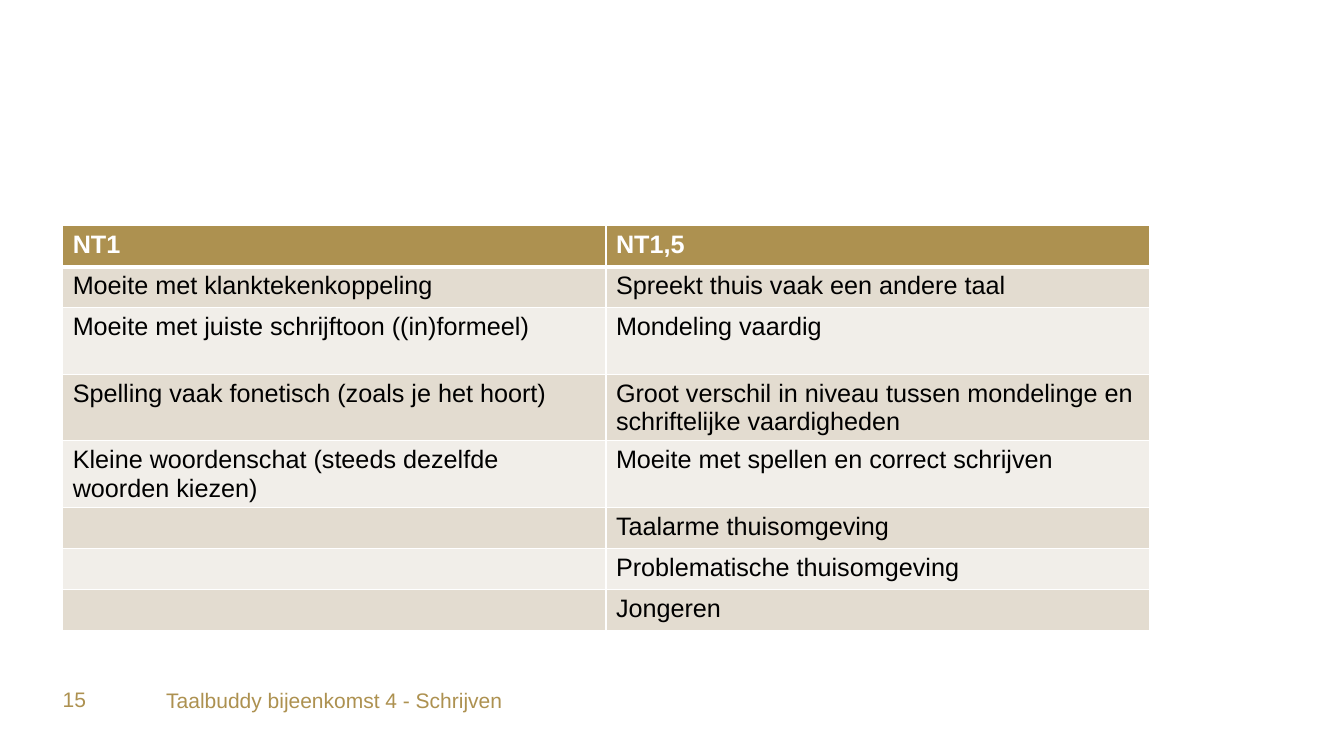
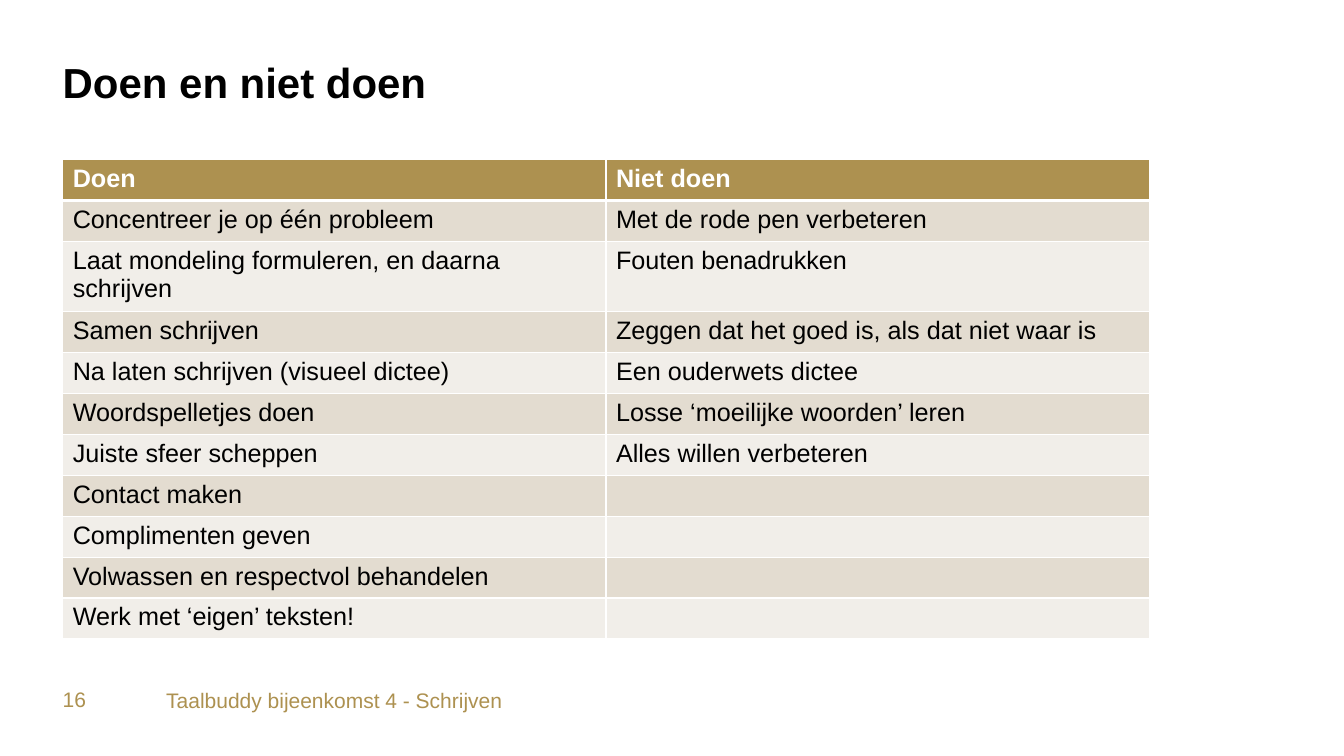
from lxml import etree
from pptx import Presentation
from pptx.dml.color import RGBColor
from pptx.oxml.ns import qn
from pptx.util import Cm, Pt

GOLD = RGBColor(0xAD, 0x91, 0x50)
SAND = RGBColor(0xE3, 0xDC, 0xD0)
CREAM = RGBColor(0xF1, 0xEE, 0xE9)
WHITE = RGBColor(0xFF, 0xFF, 0xFF)
BLACK = RGBColor(0x00, 0x00, 0x00)

FONT = "Arial"
FOOTER = "Taalbuddy bijeenkomst 4 - Schrijven"
LEFT = Cm(1.58)
TABLE_WIDTH = Cm(27.38)
ROW_HEIGHT = Cm(1.03)
TALL_ROW_HEIGHT = Cm(1.68)

SLIDES = [
    {
        "number": 15,
        "title": None,
        "top": Cm(5.69),
        "tall_rows": (2, 3, 4),
        "rows": [
            ("NT1", "NT1,5"),
            ("Moeite met klanktekenkoppeling", "Spreekt thuis vaak een andere taal"),
            ("Moeite met juiste schrijftoon ((in)formeel)", "Mondeling vaardig"),
            ("Spelling vaak fonetisch (zoals je het hoort)",
             "Groot verschil in niveau tussen mondelinge en schriftelijke vaardigheden"),
            ("Kleine woordenschat (steeds dezelfde woorden kiezen)",
             "Moeite met spellen en correct schrijven"),
            ("", "Taalarme thuisomgeving"),
            ("", "Problematische thuisomgeving"),
            ("", "Jongeren"),
        ],
    },
    {
        "number": 16,
        "title": "Doen en niet doen",
        "top": Cm(4.02),
        "tall_rows": (2,),
        "rows": [
            ("Doen", "Niet doen"),
            ("Concentreer je op één probleem", "Met de rode pen verbeteren"),
            ("Laat mondeling formuleren, en daarna schrijven", "Fouten benadrukken"),
            ("Samen schrijven", "Zeggen dat het goed is, als dat niet waar is"),
            ("Na laten schrijven (visueel dictee)", "Een ouderwets dictee"),
            ("Woordspelletjes doen", "Losse ‘moeilijke woorden’ leren"),
            ("Juiste sfeer scheppen", "Alles willen verbeteren"),
            ("Contact maken", ""),
            ("Complimenten geven", ""),
            ("Volwassen en respectvol behandelen", ""),
            ("Werk met ‘eigen’ teksten!", ""),
        ],
    },
]


def write(text_frame, text, size=18, color=BLACK, bold=False, line_spacing=None):
    paragraph = text_frame.paragraphs[0]
    paragraph.line_spacing = line_spacing
    if text:
        run = paragraph.add_run()
        run.text = text
        run.font.name = FONT
        run.font.size = Pt(size)
        run.font.bold = bold
        run.font.color.rgb = color


def add_text(slide, text, left, top, width, height, **text_format):
    text_frame = slide.shapes.add_textbox(left, top, width, height).text_frame
    text_frame.word_wrap = True
    text_frame.margin_left = text_frame.margin_right = 0
    text_frame.margin_top = text_frame.margin_bottom = 0
    write(text_frame, text, **text_format)


def set_borders(cell, top, bottom):
    properties = cell._tc.get_or_add_tcPr()
    widths = {"a:lnL": 1, "a:lnR": 1, "a:lnT": top, "a:lnB": bottom}
    for position, (tag, width) in enumerate(widths.items()):
        line = etree.Element(qn(tag), w=str(Pt(width)))
        fill = etree.SubElement(line, qn("a:solidFill"))
        etree.SubElement(fill, qn("a:srgbClr"), val=str(WHITE))
        properties.insert(position, line)


def add_table(slide, rows, top, tall_rows):
    heights = [TALL_ROW_HEIGHT if index in tall_rows else ROW_HEIGHT
               for index in range(len(rows))]
    columns = len(rows[0])
    table = slide.shapes.add_table(
        len(rows), columns, LEFT, top, TABLE_WIDTH, sum(heights)).table
    for row_index, texts in enumerate(rows):
        table.rows[row_index].height = heights[row_index]
        header = row_index == 0
        fill_color = GOLD if header else (CREAM, SAND)[row_index % 2]
        for column_index, text in enumerate(texts):
            cell = table.cell(row_index, column_index)
            cell.fill.solid()
            cell.fill.fore_color.rgb = fill_color
            set_borders(cell, top=3 if row_index == 1 else 1, bottom=3 if header else 1)
            write(cell.text_frame, text, color=WHITE if header else BLACK, bold=header)


def add_footer(slide, number):
    add_text(slide, FOOTER, Cm(4.19), Cm(17.32), TABLE_WIDTH, Cm(0.86), size=15, color=GOLD)
    add_text(slide, str(number), LEFT, Cm(17.3), Cm(2.13), Cm(0.84), size=15, color=GOLD)


def main():
    presentation = Presentation()
    presentation.slide_width = Cm(33.87)
    presentation.slide_height = Cm(19.05)
    blank_layout = presentation.slide_layouts[6]
    for content in SLIDES:
        slide = presentation.slides.add_slide(blank_layout)
        if content["title"]:
            add_text(slide, content["title"], LEFT, Cm(1.58), Cm(30.63), Cm(3.33),
                     size=30, bold=True, line_spacing=0.9)
        add_table(slide, content["rows"], content["top"], content["tall_rows"])
        add_footer(slide, content["number"])
    presentation.save("out.pptx")


if __name__ == "__main__":
    main()
